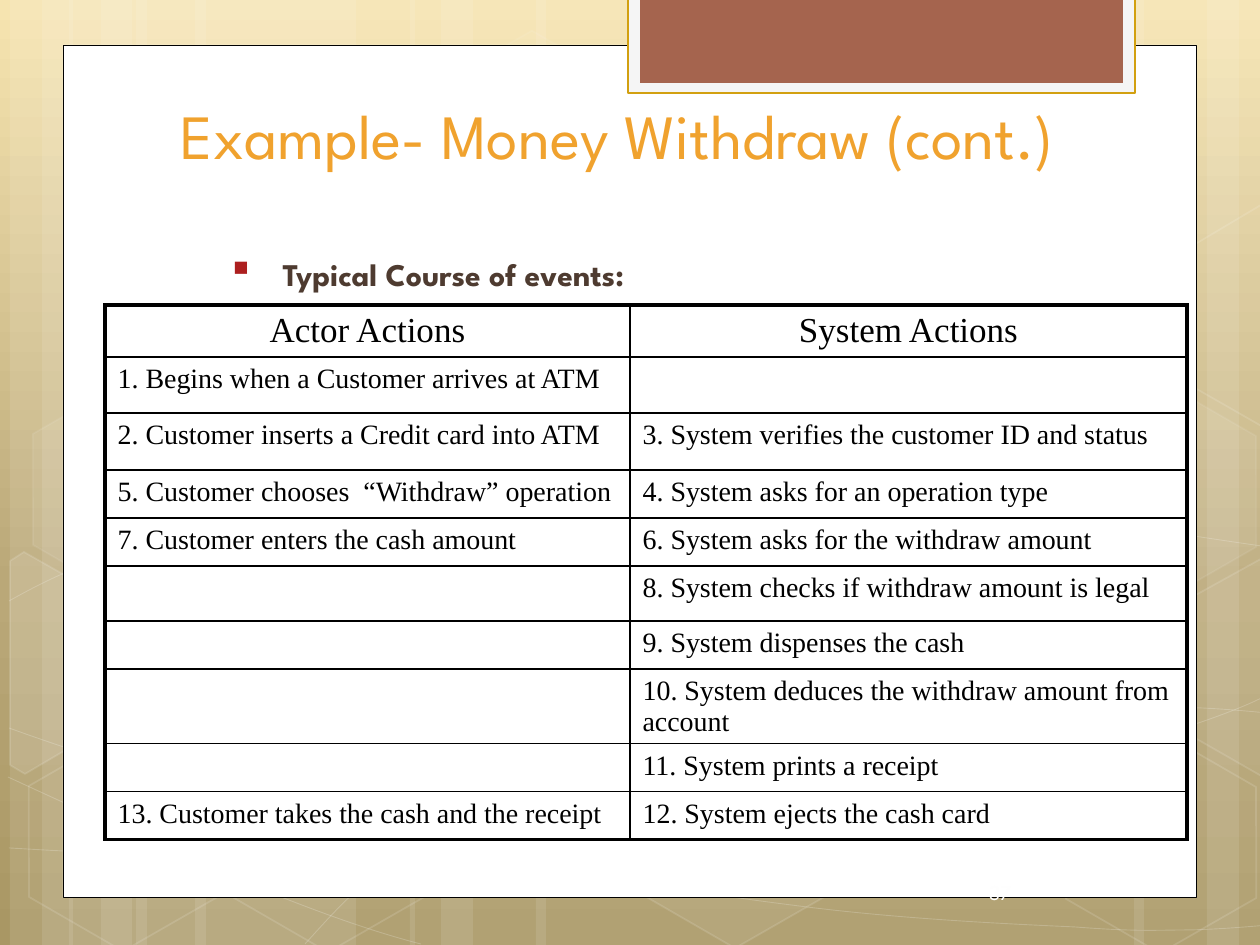
from copy import deepcopy
from dataclasses import dataclass
from math import cos, radians, sin

from lxml import etree
from pptx import Presentation
from pptx.dml.color import RGBColor
from pptx.enum.shapes import MSO_SHAPE
from pptx.enum.text import MSO_ANCHOR, PP_ALIGN
from pptx.oxml.ns import qn
from pptx.util import Pt

RECT, HEXAGON = MSO_SHAPE.RECTANGLE, MSO_SHAPE.HEXAGON
TOP, MIDDLE, BOTTOM = MSO_ANCHOR.TOP, MSO_ANCHOR.MIDDLE, MSO_ANCHOR.BOTTOM
LEFT, CENTER = PP_ALIGN.LEFT, PP_ALIGN.CENTER
EMU_PER_PX = 914400 / 126
TILT = 30


@dataclass(frozen=True)
class Theme:
    backdrop: tuple = ((0, "F6E4B0"), (0.62, "BAA878"), (1, "A99764"))
    white: str = "FFFFFF"
    black: str = "000000"
    tab_frame: str = "F5F5F5"
    tab_edge: str = "D2A010"
    tab: str = "A5644E"
    title: str = "F0A22E"
    body: str = "4E3B30"
    bullet: str = "AD1F1F"
    number: str = "FEFEFE"
    display_font: str = "League Spartan"
    table_font: str = "Times New Roman"
    title_size: int = 36
    lead_size: int = 28
    body_size: int = 18
    header_size: int = 20
    cell_size: int = 16
    number_size: int = 12
    thick: float = 2.25
    thin: float = 1


THEME = Theme()

STRIPES = [(136, 220), (10, 63), (42, 105), (195, 220), (69, 63), (101, 105),
           (924, 220), (1207, 63), (1134, 105), (536, 388), (410, 63), (441, 105)]
CURVES = [
    [(9, 848), (77, 852), (145, 856), (239, 854), (334, 853), (451, 851), (577, 838),
     (703, 825), (882, 801), (998, 777), (1113, 753), (1231, 716), (1269, 694)],
    [(9, 601), (45, 581), (82, 562), (152, 543), (224, 524), (326, 496), (437, 488),
     (549, 479), (685, 478), (824, 488), (963, 498), (1193, 537), (1269, 547)],
    [(8, 777), (160, 847), (311, 916), (421, 944)],
    [(9, 728), (48, 742), (88, 756), (161, 776), (234, 795), (344, 827), (450, 848),
     (554, 869), (687, 892), (791, 905), (896, 919), (1008, 924), (1075, 927),
     (1140, 932), (1158, 930), (1191, 930), (1223, 929), (1246, 927), (1269, 925)],
    [(305, 944), (328, 919), (350, 893), (381, 871), (411, 848), (454, 823), (489, 805),
     (524, 788), (546, 780), (592, 767), (638, 754), (722, 737), (766, 728),
     (811, 719), (818, 719), (857, 717), (896, 713), (958, 709), (1000, 708),
     (1045, 707), (1116, 708), (1116, 708), (1144, 708), (1172, 708), (1201, 708),
     (1223, 709), (1245, 711), (1256, 712), (1264, 713), (1268, 712), (1268, 713)],
]
HEXAGONS = [(421, 45, 4, 8), (626, 742, 6, 12), (14, 745, 0, 12), (18, 393, 7, 8),
            (219, 746, 0, 12), (948, 571, 10, 12), (1051, 747, 0, 12), (1051, 396, 7, 8)]
CUT_HEXAGONS = [
    ((45, 674), [(10, 561), (24, 552), (121, 607), (120, 718), (25, 774), (10, 765)], 10),
    ((1241, 655), [(1167, 611), (1261, 559), (1271, 562), (1271, 772), (1263, 777),
                   (1167, 722)], 4),
    ((1241, 304), [(1167, 261), (1261, 205), (1273, 212), (1271, 422), (1263, 427),
                   (1167, 372)], 0),
]
COLUMNS = [525, 557]
EVENTS = [
    (52, "Actor Actions", "System Actions"),
    (56, "1. Begins when a Customer arrives at ATM", ""),
    (57, "2. Customer inserts a Credit card into ATM",
     "3. System verifies the customer ID and status"),
    (48, "5. Customer chooses  “Withdraw” operation", "4. System asks for an operation type"),
    (48, "7. Customer enters the cash amount", "6. System asks for the withdraw amount"),
    (55, "", "8. System checks if withdraw amount is legal"),
    (48, "", "9. System dispenses the cash"),
    (75, "", "10. System deduces the withdraw amount from account"),
    (48, "", "11. System prints a receipt"),
    (48, "13. Customer takes the cash and the receipt", "12. System ejects the cash card"),
]


def px(value):
    return round(value * EMU_PER_PX)


def paint(fill, color, alpha=100):
    if not alpha:
        fill.background()
        return
    fill.solid()
    fill.fore_color.rgb = RGBColor.from_string(color)
    if alpha < 100:
        rgb = fill._xPr.find(qn("a:solidFill")).find(qn("a:srgbClr"))
        etree.SubElement(rgb, qn("a:alpha"), val=str(alpha * 1000))


def finish(shape, fill, fill_alpha=100, line=None, width=1, line_alpha=100):
    shape.shadow.inherit = False
    paint(shape.fill, fill, fill_alpha)
    if line:
        shape.line.width = Pt(width)
        paint(shape.line.fill, line, line_alpha)
    else:
        shape.line.fill.background()


def add_box(slide, kind, box, **style):
    shape = slide.shapes.add_shape(kind, *map(px, box))
    finish(shape, **style)
    return shape


def add_outline(slide, points, closed, **style):
    scaled = [(px(x), px(y)) for x, y in points]
    builder = slide.shapes.build_freeform(*scaled[0], scale=1.0)
    builder.add_line_segments(scaled[1:], close=closed)
    outline = builder.convert_to_shape()
    finish(outline, **style)
    return outline


def bend(outline):
    segments = list(outline._element.iter(qn("a:lnTo")))
    for start in range(0, len(segments), 3):
        first, *rest = segments[start:start + 3]
        first.tag
        curve = etree.Element(qn("a:cubicBezTo"))
        first.addprevious(curve)
        for segment in (first, *rest):
            curve.append(segment[0])
            segment.getparent().remove(segment)


def turn(point, center, degrees):
    angle = radians(degrees)
    x, y = point[0] - center[0], point[1] - center[1]
    return (center[0] + x * cos(angle) - y * sin(angle),
            center[1] + x * sin(angle) + y * cos(angle))


def add_tilted_outline(slide, center, corners, **style):
    level = [turn(corner, center, -TILT) for corner in corners]
    outline = add_outline(slide, level, True, **style)
    middle = [(min(values) + max(values)) / 2 for values in zip(*level)]
    target = turn(middle, center, TILT)
    outline.left += px(target[0] - middle[0])
    outline.top += px(target[1] - middle[1])
    outline.rotation = TILT


def style_run(run, font, size, color, bold=False):
    run.font.name = font
    run.font.size = Pt(size)
    run.font.bold = bold
    run.font.color.rgb = RGBColor.from_string(color)


def add_text(slide, box, text, size, color, anchor):
    frame = slide.shapes.add_textbox(*map(px, box)).text_frame
    frame.word_wrap = True
    frame.vertical_anchor = anchor
    frame.text = text
    paragraph = frame.paragraphs[0]
    style_run(paragraph.runs[0], THEME.display_font, size, color)
    return paragraph


def draw_backdrop(slide, height):
    fill = slide.background.fill
    fill.gradient()
    fill.gradient_angle = 270
    stops = fill._xPr.find(qn("a:gradFill")).find(qn("a:gsLst"))
    stops.append(deepcopy(stops[-1]))
    for stop, (position, color) in zip(fill.gradient_stops, THEME.backdrop):
        stop.position = position
        stop.color.rgb = RGBColor.from_string(color)
    for left, width in STRIPES:
        add_box(slide, RECT, (left, 0, width, height), fill=THEME.white, fill_alpha=10)
    for curve in CURVES:
        bend(add_outline(slide, curve, False, fill=THEME.white, fill_alpha=0,
                         line=THEME.white, width=0.5, line_alpha=20))
    for left, top, fill_alpha, line_alpha in HEXAGONS:
        hexagon = add_box(slide, HEXAGON, (left, top, 220, 192), fill=THEME.white,
                          fill_alpha=fill_alpha, line=THEME.white, line_alpha=line_alpha)
        hexagon.adjustments[0] = 0.29
        hexagon.rotation = TILT
    for center, corners, fill_alpha in CUT_HEXAGONS:
        add_tilted_outline(slide, center, corners, fill=THEME.white, fill_alpha=fill_alpha,
                           line=THEME.white, line_alpha=12)


def draw_card(slide, box):
    left, top = box[:2]
    add_box(slide, RECT, box, fill=THEME.white, line=THEME.black, width=0.5)
    add_box(slide, RECT, (left + 565, top - 47, 507, 95), fill=THEME.tab_frame,
            line=THEME.tab_edge, width=1.25)
    add_box(slide, RECT, (left + 577, top - 47, 483, 85), fill=THEME.tab)


def draw_lead(slide, box):
    paragraph = add_text(slide, box, " ", THEME.lead_size, THEME.body, TOP)
    heading = paragraph.add_run()
    heading.text = "Typical Course of events:"
    style_run(heading, THEME.display_font, THEME.body_size, THEME.body, True)
    paragraph.space_before = Pt(9)
    properties = paragraph._p.get_or_add_pPr()
    properties.set("marL", str(px(48)))
    properties.set("indent", str(px(-38)))
    color = etree.SubElement(properties, qn("a:buClr"))
    etree.SubElement(color, qn("a:srgbClr"), val=THEME.bullet)
    etree.SubElement(properties, qn("a:buFont"), typeface="Arial")
    etree.SubElement(properties, qn("a:buChar"), char="▪")


def set_borders(cell, outer):
    properties = cell._tc.get_or_add_tcPr()
    for side in "LRTB":
        width = THEME.thick if side in outer else THEME.thin
        edge = etree.SubElement(properties, qn("a:ln" + side), w=str(Pt(width)))
        solid = etree.SubElement(edge, qn("a:solidFill"))
        etree.SubElement(solid, qn("a:srgbClr"), val=THEME.black)


def fill_cell(cell, text, header, outer):
    set_borders(cell, outer)
    cell.fill.background()
    cell.margin_bottom = 0
    cell.text = text
    paragraph = cell.text_frame.paragraphs[0]
    paragraph.alignment = CENTER if header else LEFT
    size = THEME.header_size if header else THEME.cell_size
    for run in paragraph.runs:
        style_run(run, THEME.table_font, size, THEME.black)
    if not text:
        etree.SubElement(paragraph._p, qn("a:endParaRPr"), sz=str(size * 100))


def draw_events(slide, left, top):
    heights = [event[0] for event in EVENTS]
    box = (left, top, sum(COLUMNS), sum(heights))
    table = slide.shapes.add_table(len(EVENTS), len(COLUMNS), *map(px, box)).table
    table.first_row = table.horz_banding = False
    for column, width in zip(table.columns, COLUMNS):
        column.width = px(width)
    last = len(EVENTS) - 1
    for index, (height, *texts) in enumerate(EVENTS):
        table.rows[index].height = px(height)
        for number, text in enumerate(texts):
            outer = "LR"[number] + {0: "T", last: "B"}.get(index, "")
            fill_cell(table.cell(index, number), text, index == 0, outer)


def main():
    deck = Presentation()
    deck.slide_width, deck.slide_height = px(1260), px(945)
    slide = deck.slides.add_slide(deck.slide_layouts[6])
    draw_backdrop(slide, 945)
    draw_card(slide, (63, 45, 1134, 853))
    add_text(slide, (168, 28, 1071, 150), "Example- Money Withdraw (cont.)",
             THEME.title_size, THEME.title, BOTTOM)
    draw_lead(slide, (210, 231, 977, 84))
    draw_events(slide, 105, 305)
    add_text(slide, (977, 861, 262, 63), "37", THEME.number_size, THEME.number, MIDDLE)
    deck.save("out.pptx")


if __name__ == "__main__":
    main()
